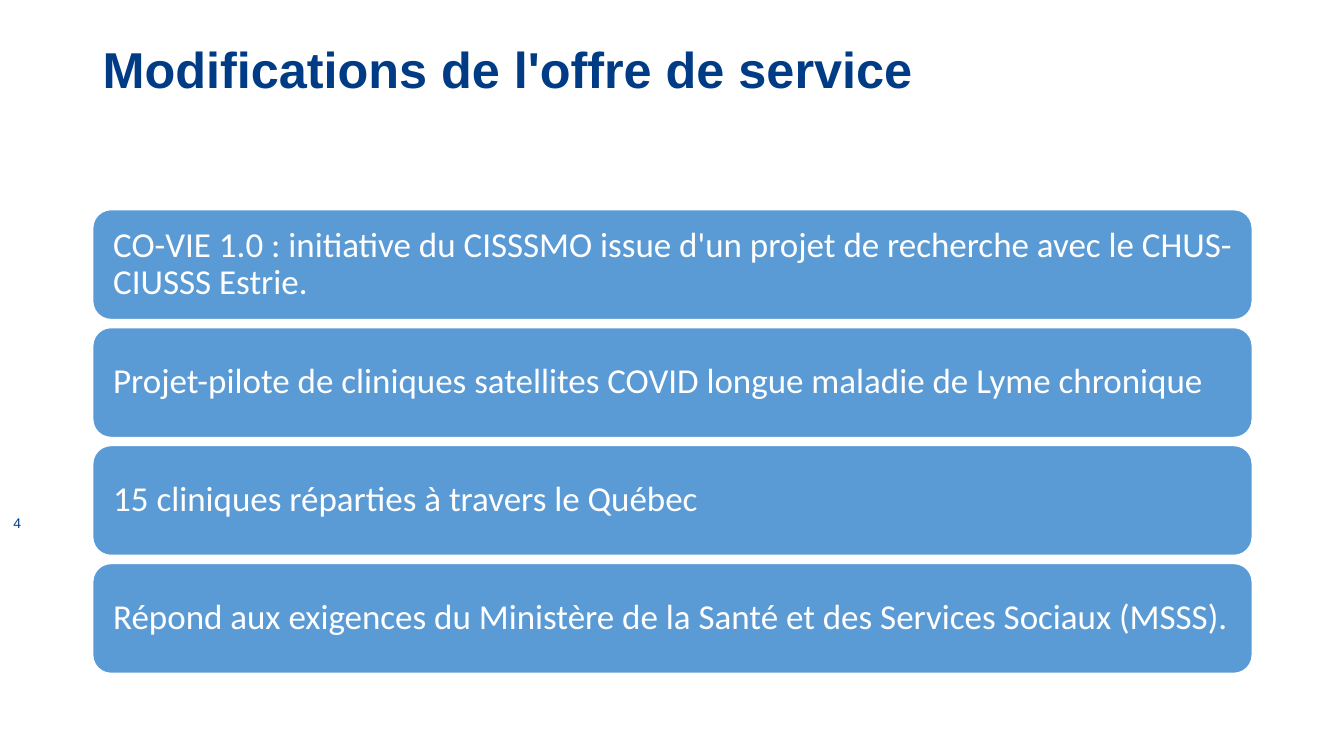
from pptx import Presentation
from pptx.dml.color import RGBColor
from pptx.enum.shapes import MSO_SHAPE
from pptx.enum.text import MSO_ANCHOR, PP_ALIGN
from pptx.util import Inches, Pt

ROUNDED = MSO_SHAPE.ROUNDED_RECTANGLE
TOP, MIDDLE = MSO_ANCHOR.TOP, MSO_ANCHOR.MIDDLE
LEFT, CENTER = PP_ALIGN.LEFT, PP_ALIGN.CENTER

TITLE = "Modifications de l'offre de service"
PAGE_NUMBER = "4"
POINTS = [
    "CO-VIE 1.0 : initiative du CISSSMO issue d'un projet de recherche avec le CHUS-CIUSSS Estrie.",
    "Projet-pilote de cliniques satellites COVID longue maladie de Lyme chronique",
    "15 cliniques réparties à travers le Québec",
    "Répond aux exigences du Ministère de la Santé et des Services Sociaux (MSSS).",
]
COLORS = {"navy": "003C85", "bar": "5B9BD5", "white": "FFFFFF"}

MARGIN, CONTENT_WIDTH = 0.92, 11.5
BARS_TOP, BAR_HEIGHT, BAR_GAP = 2.08, 1.09, 0.08
BAR_INSET = 0.15


def color(name):
    return RGBColor.from_string(COLORS[name])


def write(shape, text, font, size, color_name, anchor=MIDDLE, align=LEFT,
          bold=False, spacing=0.9):
    tf = shape.text_frame
    tf.word_wrap = True
    tf.vertical_anchor = anchor
    p = tf.paragraphs[0]
    p.text = text
    p.alignment = align
    p.line_spacing = spacing
    p.font.name = font
    p.font.size = Pt(size)
    p.font.bold = bold
    p.font.color.rgb = color(color_name)


def add_text(s, box, *args, **kwargs):
    write(s.shapes.add_textbox(*map(Inches, box)), *args, **kwargs)


def add_bar(s, top, text):
    bar = s.shapes.add_shape(ROUNDED, Inches(MARGIN), Inches(top),
                             Inches(CONTENT_WIDTH), Inches(BAR_HEIGHT))
    bar.shadow.inherit = False
    bar.fill.solid()
    bar.fill.fore_color.rgb = color("bar")
    bar.line.color.rgb = color("white")
    bar.line.width = Pt(1)
    tf = bar.text_frame
    tf.margin_left = tf.margin_right = Inches(BAR_INSET)
    tf.margin_top = tf.margin_bottom = Inches(BAR_INSET)
    write(bar, text, "Calibri", 25, "white")


def main():
    prs = Presentation()
    prs.slide_width, prs.slide_height = Inches(13.33), Inches(7.5)
    s = prs.slides.add_slide(prs.slide_layouts[6])

    add_text(s, (MARGIN, 0.4, CONTENT_WIDTH, 1.45), TITLE, "Arial", 36, "navy",
             anchor=TOP, bold=True)
    for i, text in enumerate(POINTS):
        add_bar(s, BARS_TOP + i * (BAR_HEIGHT + BAR_GAP), text)
    add_text(s, (0, 4.99, 0.34, 0.4), PAGE_NUMBER, "Arial", 10, "navy",
             align=CENTER, spacing=1.0)

    prs.save("out.pptx")


if __name__ == "__main__":
    main()
